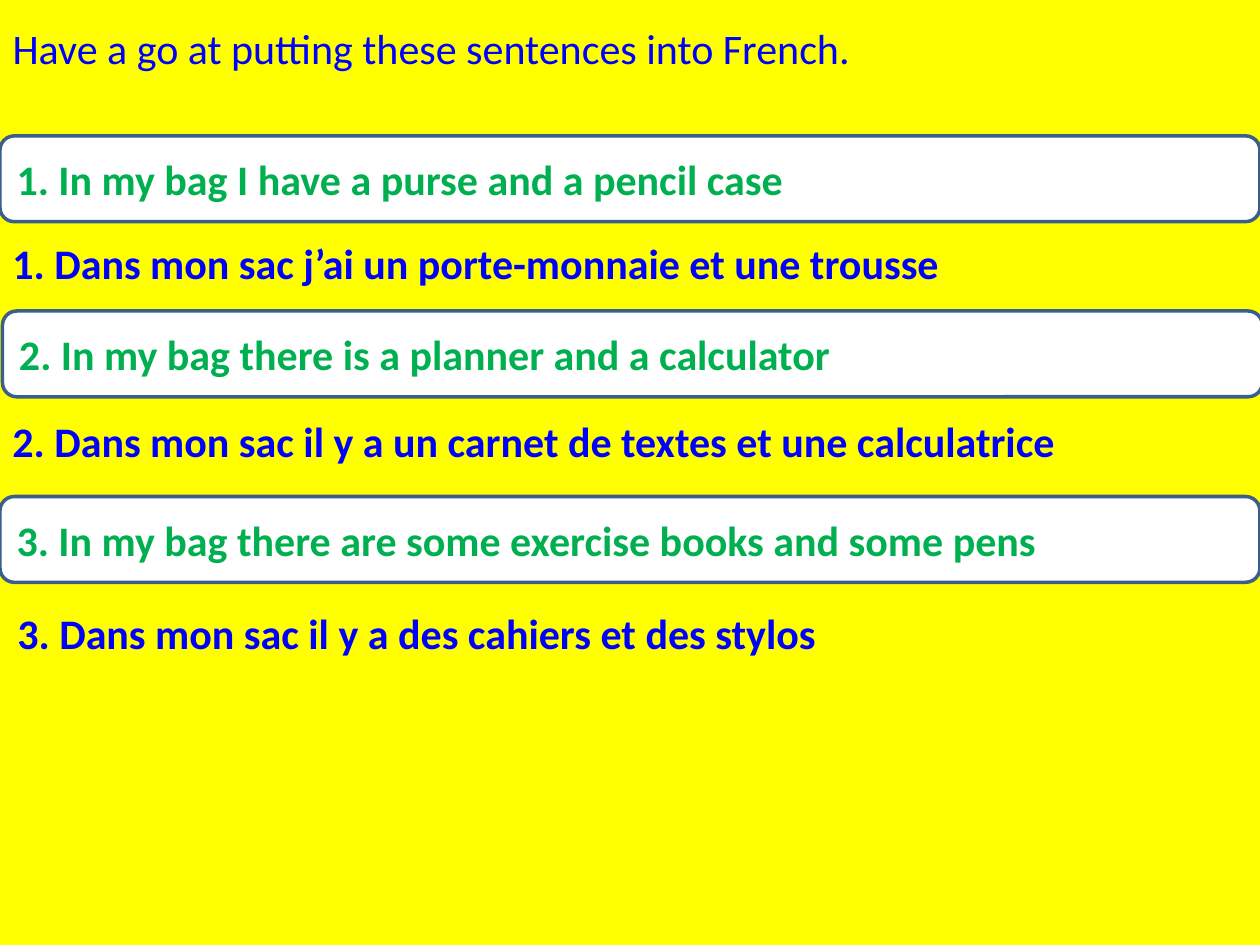
import dataclasses

import pptx
import pptx.dml.color
import pptx.enum.shapes
import pptx.enum.text
import pptx.util

Cm = pptx.util.Cm
Pt = pptx.util.Pt

YELLOW, WHITE, BLUE = "FFFF00", "FFFFFF", "0000FF"
GREEN, OUTLINE = "00B050", "3A5F8C"
WIDTH, BOX_HEIGHT, LINE_HEIGHT = 25.4, 1.73, 1.27


@dataclasses.dataclass
class Sentence:
    """An English sentence and its French answer, with positions in cm."""
    english: str
    english_left: float
    english_top: float
    french: str
    french_left: float
    french_top: float


SENTENCES = [
    Sentence("1. In my bag I have a purse and a pencil case", 0, 2.74,
             "1. Dans mon sac j’ai un porte-monnaie et une trousse", 0, 4.67),
    Sentence("2. In my bag there is a planner and a calculator", 0.05, 6.27,
             "2. Dans mon sac il y a un carnet de textes et une calculatrice", 0, 8.26),
    Sentence("3. In my bag there are some exercise books and some pens", 0, 10.01,
             "3. Dans mon sac il y a des cahiers et des stylos", 0.1, 12.12),
]


def rgb(value: str) -> pptx.dml.color.RGBColor:
    return pptx.dml.color.RGBColor.from_string(value)


def paint(fill, color: str) -> None:
    fill.solid()
    fill.fore_color.rgb = rgb(color)


def write(sp, text: str, color: str, bold: bool, anchor) -> None:
    tf = sp.text_frame
    tf.word_wrap = True
    tf.auto_size = pptx.enum.text.MSO_AUTO_SIZE.NONE
    tf.vertical_anchor = anchor
    p = tf.paragraphs[0]
    p.alignment = pptx.enum.text.PP_ALIGN.LEFT
    r = p.add_run()
    r.text = text
    r.font.name = "Calibri"
    r.font.size = Pt(24)
    r.font.bold = bold
    r.font.color.rgb = rgb(color)


def add_title(s, text: str) -> None:
    sp = s.shapes.title
    sp.left, sp.top, sp.width, sp.height = Cm(0), Cm(0.33), Cm(24.9), Cm(LINE_HEIGHT)
    write(sp, text, BLUE, False, pptx.enum.text.MSO_ANCHOR.TOP)


def add_english(s, item: Sentence) -> None:
    sp = s.shapes.add_shape(
        pptx.enum.shapes.MSO_SHAPE.ROUNDED_RECTANGLE,
        Cm(item.english_left), Cm(item.english_top), Cm(WIDTH), Cm(BOX_HEIGHT))
    sp.shadow.inherit = False
    paint(sp.fill, WHITE)
    paint(sp.line.fill, OUTLINE)
    sp.line.width = Pt(2)
    write(sp, item.english, GREEN, True, pptx.enum.text.MSO_ANCHOR.MIDDLE)


def add_french(s, item: Sentence) -> None:
    sp = s.shapes.add_textbox(
        Cm(item.french_left), Cm(item.french_top), Cm(WIDTH), Cm(LINE_HEIGHT))
    write(sp, item.french, BLUE, True, pptx.enum.text.MSO_ANCHOR.TOP)


def main() -> None:
    prs = pptx.Presentation()
    prs.slide_width, prs.slide_height = Cm(WIDTH), Cm(19.05)
    s = prs.slides.add_slide(prs.slide_layouts.get_by_name("Title Only"))
    paint(s.background.fill, YELLOW)

    # Instruction
    add_title(s, "Have a go at putting these sentences into French.")

    # Sentences, each followed by its translation
    for item in SENTENCES:
        add_english(s, item)
        add_french(s, item)

    prs.save("out.pptx")


if __name__ == "__main__":
    main()
